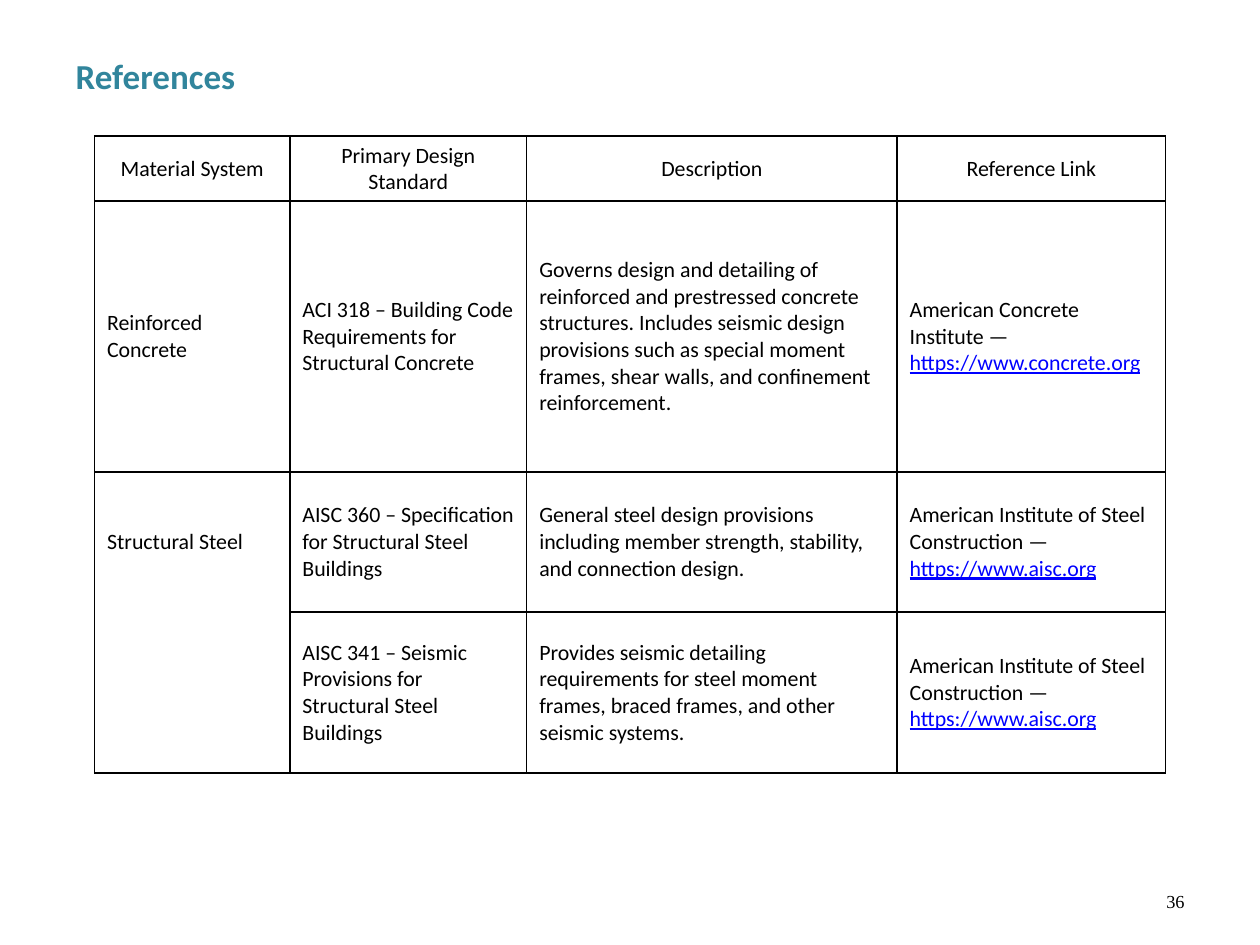
import pptx
import pptx.util
import pptx.dml.color
import pptx.enum.text
import pptx.oxml.ns
from dataclasses import dataclass
from lxml import etree

Inches = pptx.util.Inches
Align = pptx.enum.text.PP_ALIGN
Anchor = pptx.enum.text.MSO_ANCHOR


@dataclass(frozen=True)
class Theme:
    sans: str = "Calibri"
    serif: str = "Times New Roman"
    ink: str = "000000"
    teal: str = "31859C"
    link: str = "0000FF"
    number: str = "010000"
    title: float = 20
    body: float = 12.5
    small: float = 10.5


THEME = Theme()
COLS = [1.55, 1.88, 2.94, 2.13]
ROWS = [0.51, 2.15, 1.11, 1.28]
HEAD = ["Material System", "Primary Design Standard", "Description", "Reference Link"]
STEEL = ("American Institute of Steel Construction — ", "https://www.aisc.org")
BODY = [
    ["Reinforced Concrete",
     "ACI 318 – Building Code Requirements for Structural Concrete",
     "Governs design and detailing of reinforced and prestressed concrete structures. "
     "Includes seismic design provisions such as special moment frames, shear walls, "
     "and confinement reinforcement.",
     ("American Concrete Institute — ", "https://www.concrete.org")],
    ["Structural Steel",
     "AISC 360 – Specification for Structural Steel Buildings",
     "General steel design provisions including member strength, stability, "
     "and connection design.",
     STEEL],
    ["",
     "AISC 341 – Seismic Provisions for Structural Steel Buildings",
     "Provides seismic detailing requirements for steel moment frames, braced frames, "
     "and other seismic systems.",
     STEEL],
]


def write(para, text, size=THEME.body, face=THEME.sans, color=THEME.ink,
          bold=False, line=False, align=Align.LEFT):
    """Add one formatted run to a paragraph."""
    para.alignment = align
    run = para.add_run()
    run.text = text
    font = run.font
    font.size = pptx.util.Pt(size)
    font.name = face
    font.bold = bold
    font.underline = line
    font.color.rgb = pptx.dml.color.RGBColor.from_string(color)


def border(cell, sides):
    """Rule the given sides (from L, R, T, B) and clear the others."""
    props = cell._tc.get_or_add_tcPr()
    qn = pptx.oxml.ns.qn
    for side in "LRTB":
        edge = etree.SubElement(props, qn("a:ln" + side), w="12700")
        if side in sides:
            fill = etree.SubElement(edge, qn("a:solidFill"))
            etree.SubElement(fill, qn("a:srgbClr"), val=THEME.ink)
        else:
            etree.SubElement(edge, qn("a:noFill"))


def add_title(slide):
    title = slide.shapes.title
    title.left, title.top = Inches(0.5), Inches(0.38)
    title.width, title.height = Inches(3.75), Inches(0.44)
    frame = title.text_frame
    frame.auto_size = pptx.enum.text.MSO_AUTO_SIZE.NONE
    frame.vertical_anchor = Anchor.TOP
    write(frame.paragraphs[0], "References", size=THEME.title, color=THEME.teal, bold=True)


def add_number(slide):
    box = slide.shapes.add_textbox(Inches(7.17), Inches(6.95), Inches(2.33), Inches(0.4))
    frame = box.text_frame
    frame.word_wrap = True
    frame.vertical_anchor = Anchor.MIDDLE
    write(frame.paragraphs[0], "36", size=THEME.small, face=THEME.serif,
          color=THEME.number, align=Align.RIGHT)


def fill_cell(cell, item, align, sides):
    """Fill a cell with plain text or a (label, address) pair."""
    border(cell, sides)
    cell.fill.background()
    cell.vertical_anchor = Anchor.MIDDLE
    label, link = item if isinstance(item, tuple) else (item, "")
    para = cell.text_frame.paragraphs[0]
    if label:
        write(para, label, align=align)
    if link:
        write(para, link, color=THEME.link, line=True, align=align)


def add_grid(slide):
    data = [HEAD] + BODY
    table = slide.shapes.add_table(len(ROWS), len(COLS), Inches(0.75), Inches(1.08),
                                   Inches(sum(COLS)), Inches(sum(ROWS))).table
    table.horz_banding = False
    table.first_row = False
    for col, width in zip(table.columns, COLS):
        col.width = Inches(width)
    for row, height in zip(table.rows, ROWS):
        row.height = Inches(height)
    open_sides = {(2, 0): "LRT", (3, 0): "LRB"}
    for r, items in enumerate(data):
        align = Align.LEFT if r else Align.CENTER
        for c, item in enumerate(items):
            fill_cell(table.cell(r, c), item, align, open_sides.get((r, c), "LRTB"))


def main():
    deck = pptx.Presentation()
    deck.slide_width, deck.slide_height = Inches(10), Inches(7.5)
    slide = deck.slides.add_slide(deck.slide_layouts[5])
    add_number(slide)
    add_title(slide)
    add_grid(slide)
    deck.save("out.pptx")


if __name__ == "__main__":
    main()
